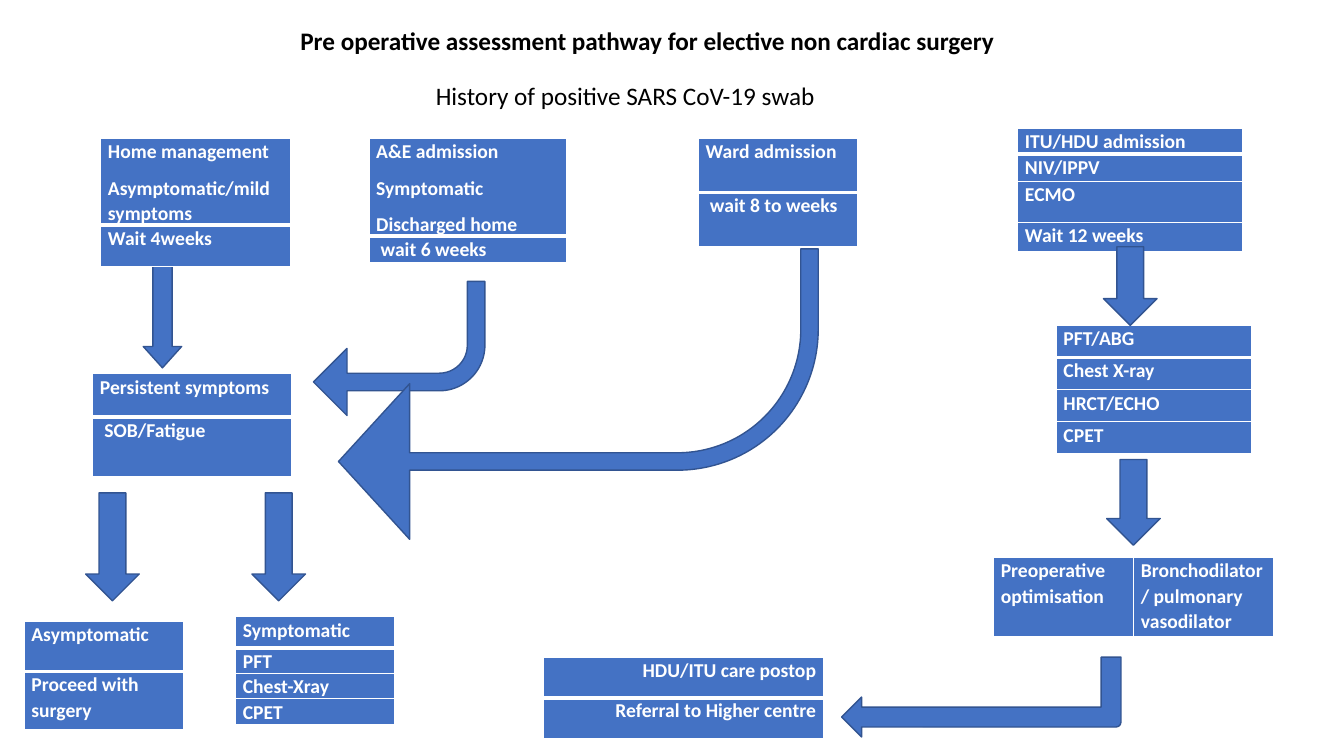
from dataclasses import dataclass

from lxml.etree import SubElement as Sub
from pptx import Presentation
from pptx.dml.color import RGBColor as Rgb
from pptx.enum.shapes import MSO_SHAPE as Kind
from pptx.enum.text import MSO_ANCHOR as Anchor, PP_ALIGN as Align
from pptx.oxml.ns import qn
from pptx.util import Cm, Pt


@dataclass(frozen=True)
class Theme:
    """Colours, font and sizes of the pathway."""
    fill: str = "4472C4"
    edge: str = "325491"
    light: str = "FFFFFF"
    dark: str = "000000"
    face: str = "Calibri"
    head: int = 18
    body: int = 14


LOOK = Theme()
DOWN, BENT = Kind.DOWN_ARROW, Kind.BENT_ARROW

CARE = [
    (25.65, 3.23, 5.66, [0.65, 0.69, 1.04, 0.72],
     [["ITU/HDU admission"], ["NIV/IPPV"], ["ECMO"], ["Wait 12 weeks"]]),
    (5.94, 15.54, 4.01, [0.79, 0.64, 0.64, 0.64],
     [["Symptomatic"], ["PFT"], ["Chest-Xray"], ["CPET"]]),
    (26.62, 8.2, 4.93, [0.81] * 4,
     [["PFT/ABG"], ["Chest X-ray"], ["HRCT/ECHO"], ["CPET"]]),
    (25.04, 14.05, 7.06, [2.03],
     [["Preoperative optimisation", "Bronchodilator/ pulmonary vasodilator"]]),
    (13.69, 16.56, 7.06, [1.02] * 2,
     [["HDU/ITU care postop"], ["Referral to Higher centre"]], Align.RIGHT),
]

ENTRY = [
    (2.34, 9.42, 5.0, [1.09, 1.5], [["Persistent symptoms"], [" SOB/Fatigue"]]),
    (0.61, 15.65, 4.01, [1.27, 1.47], [["Asymptomatic"], ["Proceed with surgery"]]),
    (2.54, 3.48, 4.78, [2.18, 1.05],
     [["Home management\nAsymptomatic/mild symptoms"], ["Wait 4weeks"]]),
    (9.3, 3.48, 4.98, [2.45, 0.66],
     [["A&E admission\nSymptomatic\nDischarged home"], [" wait 6 weeks"]]),
    (17.6, 3.48, 4.01, [1.37] * 2, [["Ward admission"], [" wait 8 to weeks"]]),
]

ARROWS = [
    (DOWN, 3.61, 5.89, 0.97, 3.38, [0.5, 0.555]),
    (BENT, 7.9, 7.09, 4.32, 3.38, [0.131, 0.25, 0.25, 0.34]),
    (BENT, 8.53, 6.27, 12.09, 7.32, [0.06, 0.268, 0.245, 0.485]),
    (DOWN, 27.81, 6.22, 1.35, 1.98, [0.5, 0.5]),
    (DOWN, 27.89, 11.58, 1.35, 2.16, [0.5, 0.5]),
    (BENT, 21.21, 16.56, 7.04, 2.01, [0.25, 0.25, 0.25, 0.063]),
    (DOWN, 2.16, 12.42, 1.35, 2.72, [0.5, 0.5]),
    (DOWN, 6.35, 12.42, 1.35, 2.72, [0.5, 0.5]),
]


def apply(item, form):
    """Set each attribute in form on item."""
    for name, value in form.items():
        setattr(item, name, value)


def style(para, size, tone, bold):
    """Set the font of a paragraph's runs."""
    for run in para.runs:
        apply(run.font, {"name": LOOK.face, "size": Pt(size), "bold": bold})
        run.font.color.rgb = Rgb.from_string(tone)


def label(slide, x, y, w, text, bold):
    """Add one heading line."""
    frame = slide.shapes.add_textbox(Cm(x), Cm(y), Cm(w), Cm(1.02)).text_frame
    apply(frame, {"word_wrap": True, "text": text})
    style(frame.paragraphs[0], LOOK.head, LOOK.dark, bold)


def border(cell, row):
    """Draw white cell edges, heavier beneath the first row."""
    widths = {"lnL": 1, "lnR": 1, "lnT": 3 if row == 1 else 1, "lnB": 1 if row else 3}
    props = cell._tc.get_or_add_tcPr()
    for tag, width in widths.items():
        line = Sub(props, qn("a:" + tag), w=str(Pt(width)))
        Sub(Sub(line, qn("a:solidFill")), qn("a:srgbClr"), val=LOOK.light)


def write(cell, text, row, align):
    """Fill and format one table cell."""
    apply(cell, {"text": text, "vertical_anchor": Anchor.TOP,
                 "margin_left": Cm(0.18), "margin_right": Cm(0.18),
                 "margin_top": 0, "margin_bottom": 0})
    for para in cell.text_frame.paragraphs:
        apply(para, {"alignment": align, "line_spacing": 1.07, "space_after": Pt(8)})
        style(para, LOOK.body, LOOK.light, True)
    border(cell, row)
    cell.fill.solid()
    cell.fill.fore_color.rgb = Rgb.from_string(LOOK.fill)


def box(slide, x, y, w, rows, cells, align=Align.LEFT):
    """Add one step of the pathway as a table."""
    table = slide.shapes.add_table(
        len(rows), len(cells[0]), Cm(x), Cm(y), Cm(w), Cm(sum(rows))).table
    for row, (high, texts) in enumerate(zip(rows, cells)):
        table.rows[row].height = Cm(high)
        for col, text in enumerate(texts):
            write(table.cell(row, col), text, row, align)


def arrow(slide, kind, x, y, w, h, bends):
    """Add a block arrow, turning bent ones to point left."""
    shape = slide.shapes.add_shape(kind, Cm(x), Cm(y), Cm(w), Cm(h))
    apply(shape, {"rotation": 180 if kind == BENT else 0})
    shape.shadow.inherit = False
    for place, bend in enumerate(bends):
        shape.adjustments[place] = bend
    shape.fill.solid()
    shape.fill.fore_color.rgb = Rgb.from_string(LOOK.fill)
    shape.line.color.rgb = Rgb.from_string(LOOK.edge)
    shape.line.width = Pt(1)


def main():
    """Build and save the pathway slide."""
    deck = Presentation()
    apply(deck, {"slide_width": Cm(33.87), "slide_height": Cm(19.05)})
    slide = deck.slides.add_slide(deck.slide_layouts[6])
    label(slide, 7.32, 0.51, 20.17,
          "Pre operative assessment pathway for elective non cardiac surgery", True)
    label(slide, 10.59, 1.9, 10.62, " History of positive SARS CoV-19 swab", False)
    for step in CARE:
        box(slide, *step)
    for item in ARROWS:
        arrow(slide, *item)
    for step in ENTRY:
        box(slide, *step)
    deck.save("out.pptx")


if __name__ == "__main__":
    main()
